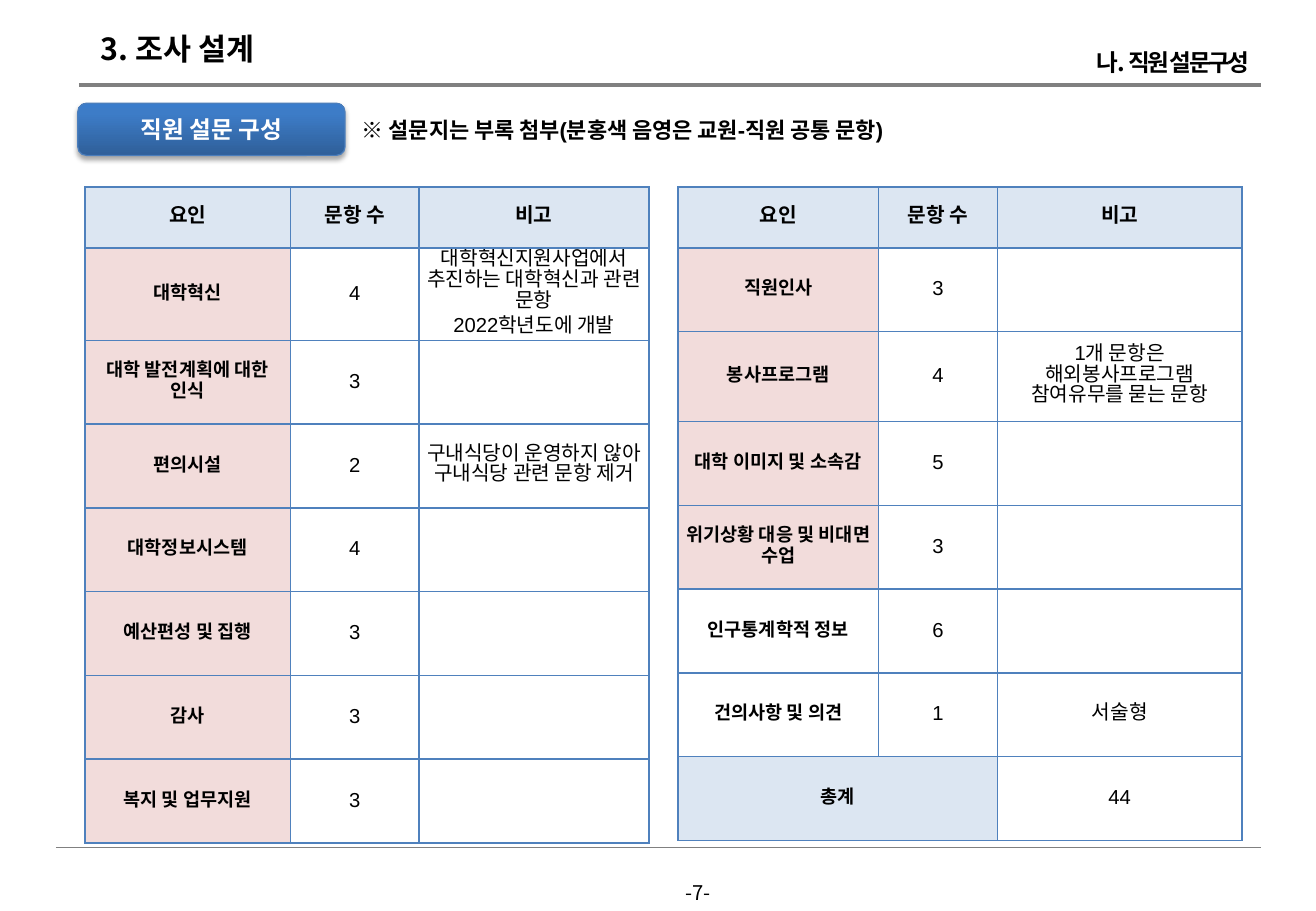
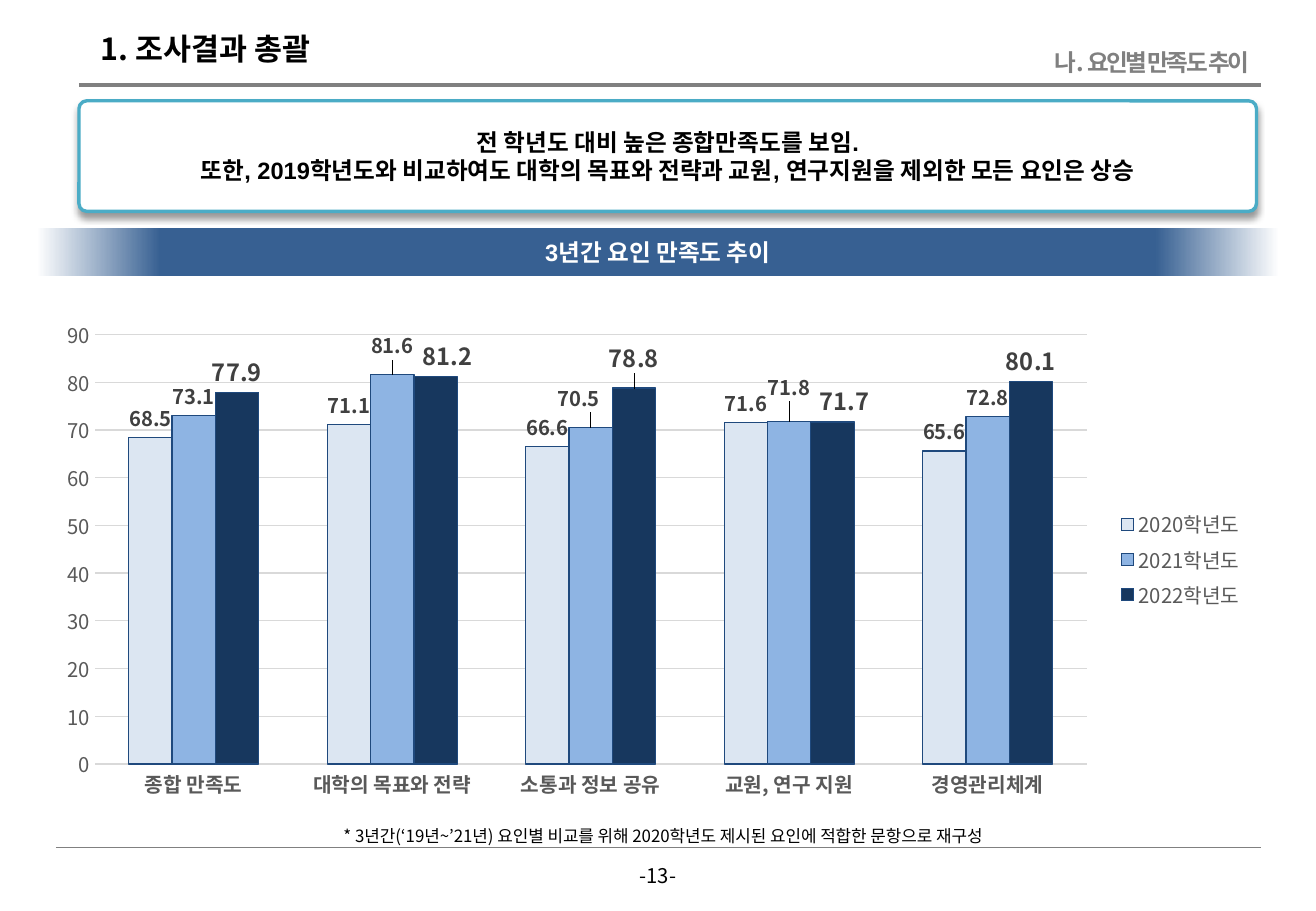
from lxml import etree
from pptx import Presentation
from pptx.chart.data import CategoryChartData
from pptx.dml.color import RGBColor
from pptx.enum.chart import XL_CHART_TYPE, XL_LABEL_POSITION, XL_LEGEND_POSITION, XL_TICK_MARK
from pptx.enum.shapes import MSO_CONNECTOR, MSO_SHAPE
from pptx.enum.text import MSO_ANCHOR, PP_ALIGN
from pptx.oxml import parse_xml
from pptx.oxml.ns import nsdecls, qn
from pptx.util import Inches, Pt

LEFT, CENTER, RIGHT = PP_ALIGN.LEFT, PP_ALIGN.CENTER, PP_ALIGN.RIGHT
MIDDLE = MSO_ANCHOR.MIDDLE
STRAIGHT = MSO_CONNECTOR.STRAIGHT
RECT, ROUND = MSO_SHAPE.RECTANGLE, MSO_SHAPE.ROUNDED_RECTANGLE
COLUMNS = XL_CHART_TYPE.COLUMN_CLUSTERED
OUTSIDE = XL_LABEL_POSITION.OUTSIDE_END
LEGEND_RIGHT = XL_LEGEND_POSITION.RIGHT
NO_TICK = XL_TICK_MARK.NONE

NOTO, ARIAL = "Noto Sans CJK KR", "Arial"
BLACK, WHITE, GRAY = "000000", "FFFFFF", "808080"
PALE_BLUE, PINK, BORDER = "DCE6F2", "F2DCDB", "4F81BD"

# Content: survey tables (factor, number of items, remark)
HEADER = ("요인", "문항 수", "비고")
LEFT_ROWS = [
    ("대학혁신", "4", "대학혁신지원사업에서 추진하는 대학혁신과 관련 문항\n2022학년도에 개발"),
    ("대학 발전계획에 대한 인식", "3", ""),
    ("편의시설", "2", "구내식당이 운영하지 않아 구내식당 관련 문항 제거"),
    ("대학정보시스템", "4", ""),
    ("예산편성 및 집행", "3", ""),
    ("감사", "3", ""),
    ("복지 및 업무지원", "3", ""),
]
RIGHT_ROWS = [
    ("직원인사", "3", ""),
    ("봉사프로그램", "4", "1개 문항은 해외봉사프로그램 참여유무를 묻는 문항"),
    ("대학 이미지 및 소속감", "5", ""),
    ("위기상황 대응 및 비대면 수업", "3", ""),
    ("인구통계학적 정보", "6", ""),
    ("건의사항 및 의견", "1", "서술형"),
    ("총계", "", "44"),
]
STAFF_ONLY = {"인구통계학적 정보", "건의사항 및 의견"}
TOTAL = "총계"
# left, column widths, rows, index of the taller row
TABLES = [
    (0.7, (1.69, 1.06, 1.89), LEFT_ROWS, 1),
    (5.58, (1.65, 0.98, 2.01), RIGHT_ROWS, 2),
]

# Content: satisfaction chart
FACTORS = ["종합 만족도", "대학의 목표와 전략", "소통과 정보 공유", "교원, 연구 지원", "경영관리체계"]
# name, values, fill, label size, label shifts by point
SERIES = [
    ("2020학년도", (68.5, 71.1, 66.6, 71.6, 65.6), PALE_BLUE, 12, {}),
    ("2021학년도", (73.1, 81.6, 70.5, 71.8, 72.8), "8EB4E3", 12,
     {1: (0, -0.02), 2: (-0.01, -0.02), 3: (0, -0.03)}),
    ("2022학년도", (77.9, 81.2, 78.8, 71.7, 80.1), "17375E", 14,
     {0: (0, 0), 1: (0.01, 0), 2: (0, -0.02), 3: (0.01, 0)}),
]
PLOT_AREA = {"x": 0.04, "y": 0.05, "w": 0.82, "h": 0.86}
SUMMARY = ("전 학년도 대비 높은 종합만족도를 보임.\n"
           "또한, 2019학년도와 비교하여도 대학의 목표와 전략과 교원, 연구지원을 제외한 모든 요인은 상승")
FOOTNOTE = "* 3년간(‘19년~’21년) 요인별 비교를 위해 2020학년도 제시된 요인에 적합한 문항으로 재구성"


def rgb(value):
    return RGBColor.from_string(value)


def box(*lengths):
    return [Inches(v) for v in lengths]


def set_font(font, size, color=BLACK, bold=False, name=NOTO):
    font.size, font.bold, font.name = Pt(size), bold, name
    font.color.rgb = rgb(color)
    ea = etree.Element(qn("a:ea"), typeface=NOTO)
    font._rPr.find(qn("a:latin")).addnext(ea)


def write(tf, text, size=12, color=BLACK, bold=False, font=NOTO, align=LEFT,
          insets=None, spacing=None, before=0, tracking=None):
    """Fill a text frame, one paragraph per line of text."""
    tf.word_wrap = True
    tf.vertical_anchor = MIDDLE
    if insets:
        across, down = box(*insets)
        tf.margin_left = tf.margin_right = across
        tf.margin_top = tf.margin_bottom = down
    for i, line in enumerate(text.split("\n")):
        p = tf.add_paragraph() if i else tf.paragraphs[0]
        p.alignment = align
        if spacing:
            p.line_spacing = Pt(spacing)
        if i and before:
            p.space_before = Pt(before)
        r = p.add_run()
        r.text = line
        set_font(r.font, size, color, bold, font)
        if tracking:
            r.font._rPr.set("spc", str(int(tracking * 100)))


def add_text(s, at, text, **style):
    write(s.shapes.add_textbox(*box(*at)).text_frame, text, **style)


def add_panel(s, kind, at, fill=None, line=None, line_width=1):
    sp = s.shapes.add_shape(kind, *box(*at))
    sp.shadow.inherit = False
    if fill:
        sp.fill.solid()
        sp.fill.fore_color.rgb = rgb(fill)
    if line:
        sp.line.color.rgb = rgb(line)
        sp.line.width = Pt(line_width)
    else:
        sp.line.fill.background()
    return sp


def add_gradient(sp, stops, angle):
    gs = "".join(f'<a:gs pos="{pos * 1000}"><a:srgbClr val="{c}"/></a:gs>' for pos, c in stops)
    grad = parse_xml(f'<a:gradFill {nsdecls("a")} rotWithShape="1"><a:gsLst>{gs}</a:gsLst>'
                     f'<a:lin ang="{angle * 60000}" scaled="0"/></a:gradFill>')
    sp._element.spPr.find(qn("a:prstGeom")).addnext(grad)


def add_shadow(sp, alpha, blur, distance):
    sp._element.spPr.find(qn("a:effectLst")).append(parse_xml(
        f'<a:outerShdw {nsdecls("a")} blurRad="{Pt(blur)}" dist="{Pt(distance)}" dir="5400000" '
        f'rotWithShape="0"><a:srgbClr val="{BLACK}"><a:alpha val="{alpha * 1000}"/>'
        '</a:srgbClr></a:outerShdw>'))


def add_rule(s, x, y, width):
    cxn = s.shapes.add_connector(STRAIGHT, *box(x, y, 10.38, y))
    cxn.line.color.rgb = rgb(GRAY)
    cxn.line.width = Pt(width)
    etree.SubElement(cxn._element.spPr, qn("a:effectLst"))


def add_page(prs, title, title_width, section, section_color, number, number_at):
    """Title, section name, two rules and page number."""
    s = prs.slides.add_slide(prs.slide_layouts[5])
    add_rule(s, 0.65, 0.7, 2)
    add_rule(s, 0.46, 6.98, 0.5)
    sp = s.shapes.title
    sp.left, sp.top, sp.width, sp.height = box(0.73, 0.2, title_width, 0.4)
    write(sp.text_frame, title, size=18, bold=True)
    add_text(s, (8.37, 0.34, 2.01, 0.34), section, size=14, color=section_color,
             bold=True, align=RIGHT, tracking=-1.5)
    add_text(s, (*number_at, 0.55, 0.3), number, align=CENTER)
    return s


def format_cell(cell, text, fill, size, bold):
    tcPr = cell._tc.get_or_add_tcPr()
    for side in ("lnL", "lnR", "lnT", "lnB"):
        tcPr.append(parse_xml(f'<a:{side} {nsdecls("a")} w="{Pt(1)}"><a:solidFill>'
                              f'<a:srgbClr val="{BORDER}"/></a:solidFill></a:{side}>'))
    if fill:
        cell.fill.solid()
        cell.fill.fore_color.rgb = rgb(fill)
    else:
        cell.fill.background()
    cell.margin_left = cell.margin_right = Inches(0.04)
    cell.margin_top = cell.margin_bottom = Inches(0.02)
    cell.vertical_anchor = MIDDLE
    if text:
        write_cell = cell.text_frame
        write(write_cell, text, size=size, bold=bold, font=ARIAL, align=CENTER,
              spacing=12.4, before=2.4)
        cell.vertical_anchor = MIDDLE


def add_survey_table(s, left, widths, rows, tall_row):
    rows = [HEADER] + rows
    heights = [0.5] + [0.69] * (len(rows) - 1)
    heights[tall_row] = 0.74
    table = s.shapes.add_table(len(rows), len(widths),
                               *box(left, 1.54, sum(widths), sum(heights))).table
    table.first_row = table.horz_banding = False
    for column, width in zip(table.columns, widths):
        column.width = Inches(width)
    for i, row in enumerate(rows):
        table.rows[i].height = Inches(heights[i])
        for j, text in enumerate(row):
            if i == 0 or (row[0] == TOTAL and j < 2):
                fill = PALE_BLUE
            else:
                fill = PINK if j == 0 and row[0] not in STAFF_ONLY else None
            format_cell(table.cell(i, j), text, fill,
                        size=11 if i and j == 0 else 12, bold=i == 0 or j == 0)
        if row[0] == TOTAL:
            table.cell(i, 0).merge(table.cell(i, 1))


def manual_layout(target="", **values):
    inner = f'<c:layoutTarget val="{target}"/>' if target else ""
    if target:
        inner += '<c:xMode val="edge"/><c:yMode val="edge"/>'
    inner += "".join(f'<c:{k} val="{v}"/>' for k, v in values.items())
    return parse_xml(f'<c:layout {nsdecls("c")}><c:manualLayout>{inner}</c:manualLayout></c:layout>')


def format_series(series, fill, label_size, shifts):
    series.format.fill.solid()
    series.format.fill.fore_color.rgb = rgb(fill)
    series.format.line.color.rgb = rgb("1F497D")
    series.format.line.width = Pt(0.75)
    labels = series.data_labels
    labels.show_value = True
    labels.position = OUTSIDE
    labels.number_format, labels.number_format_is_linked = "0.0", False
    set_font(labels.font, label_size, "404040", True)
    for point, (x, y) in shifts.items():
        label = series.points[point].data_label
        label.position = OUTSIDE
        set_font(label.font, label_size, "404040", True)
        idx = series._element.xpath(f'c:dLbls/c:dLbl/c:idx[@val="{point}"]')[0]
        idx.addnext(manual_layout(x=x, y=y))


def add_trend_chart(s):
    data = CategoryChartData(number_format="0.0")
    data.categories = FACTORS
    for name, values, *_ in SERIES:
        data.add_series(name, values)
    chart = s.shapes.add_chart(COLUMNS, *box(0.38, 2.55, 9.96, 4.11), data).chart
    set_font(chart.font, 10)
    chart.has_title = False
    chart.has_legend = True
    chart.legend.position = LEGEND_RIGHT
    chart.legend.include_in_layout = False
    set_font(chart.legend.font, 12, "595959")

    for axis in (chart.category_axis, chart.value_axis):
        axis.major_tick_mark = axis.minor_tick_mark = NO_TICK
        axis.format.line.fill.background()
        set_font(axis.tick_labels.font, 12, "595959", axis is not chart.value_axis)
    set_font(chart.category_axis.tick_labels.font, 12, "595959", True)
    axis = chart.value_axis
    axis.minimum_scale, axis.maximum_scale, axis.major_unit = 0, 90, 10
    axis.tick_labels.number_format, axis.tick_labels.number_format_is_linked = "0", False
    set_font(axis.tick_labels.font, 12, "595959")
    axis.major_gridlines.format.line.color.rgb = rgb("D9D9D9")
    axis.major_gridlines.format.line.width = Pt(0.75)

    plot = chart.plots[0]
    plot.gap_width, plot.overlap = 158, 0
    plot.vary_by_categories = False
    for series, (_, _, *style) in zip(plot.series, SERIES):
        format_series(series, *style)
    area = chart._chartSpace.chart.plotArea
    for old in area.findall(qn("c:layout")):
        area.remove(old)
    area.insert(0, manual_layout("inner", **PLOT_AREA))


def build_survey_slide(prs):
    s = add_page(prs, "3. 조사 설계", 1.6, "나. 직원 설문구성", BLACK, "-7-", (5.47, 7.2))
    sp = add_panel(s, ROUND, (0.64, 0.85, 2.2, 0.43), line="4B7EBC", line_width=0.75)
    add_gradient(sp, [(0, "2F5F99"), (80, "3D7CC7"), (100, "3A7CCB")], 270)
    add_shadow(sp, 35, 3.1, 1.8)
    write(sp.text_frame, "직원 설문 구성", size=14, color=WHITE, bold=True, align=CENTER)
    add_text(s, (2.88, 0.91, 5.02, 0.32), "※ 설문지는 부록 첨부(분홍색 음영은 교원-직원 공통 문항)",
             size=13, bold=True, font=ARIAL)
    for table in TABLES:
        add_survey_table(s, *table)


def build_trend_slide(prs):
    s = add_page(prs, "1. 조사결과 총괄", 2.1, "나. 요인별 만족도 추이", GRAY, "-13-", (5.14, 7.06))
    sp = add_panel(s, RECT, (0.3, 1.88, 10.23, 0.39))
    add_gradient(sp, [(0, WHITE), (10, "376092"), (90, "376092"), (100, WHITE)], 0)
    write(sp.text_frame, "3년간 요인 만족도 추이", size=14, color=WHITE, bold=True,
          font=ARIAL, align=CENTER)
    sp = add_panel(s, ROUND, (0.65, 0.83, 9.69, 0.91), WHITE, "4BACC6", 2)
    sp.adjustments[0] = 0.07
    add_shadow(sp, 40, 4, 3)
    write(sp.text_frame, SUMMARY, size=14, bold=True, font=ARIAL, align=CENTER, insets=(0.2, 0.04))
    add_text(s, (0.73, 6.75, 9.45, 0.27), FOOTNOTE, size=10, align=CENTER)
    add_trend_chart(s)


def main():
    prs = Presentation()
    prs.slide_width, prs.slide_height = box(10.83, 7.5)
    build_survey_slide(prs)
    build_trend_slide(prs)
    prs.save("out.pptx")


if __name__ == "__main__":
    main()
